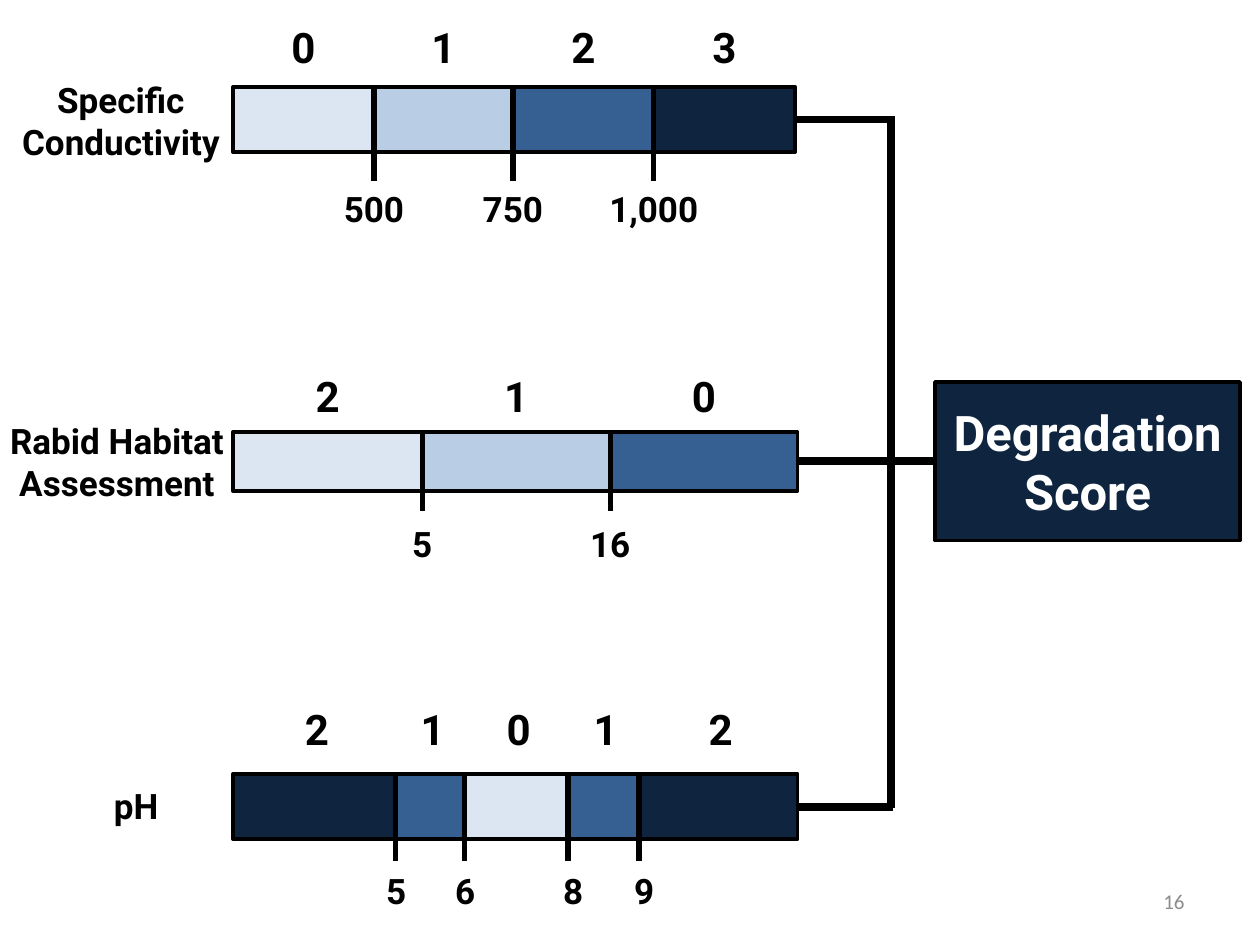
from itertools import pairwise
from lxml.etree import SubElement
from pptx import Presentation
from pptx.dml.color import RGBColor
from pptx.enum.shapes import MSO_CONNECTOR, MSO_SHAPE
from pptx.enum.text import MSO_ANCHOR, MSO_AUTO_SIZE, PP_ALIGN
from pptx.oxml.ns import qn
from pptx.util import Cm, Pt

BLACK = RGBColor(0x00, 0x00, 0x00)
WHITE = RGBColor(0xFF, 0xFF, 0xFF)
GREY = RGBColor(0x8C, 0x8C, 0x8C)
PALE = RGBColor(0xDC, 0xE6, 0xF2)
LIGHT = RGBColor(0xB9, 0xCD, 0xE5)
MID = RGBColor(0x37, 0x60, 0x92)
NAVY = RGBColor(0x0F, 0x24, 0x3E)

# Content, lengths in cm: "edges" bound the segments of a bar,
# "marks" pairs each inner edge's value with the width of its label
SCALES = [
    dict(name="Specific Conductivity", box=(0.18, 1.45, 4.52, 1.96),
         top=1.75, high=1.32, edges=[4.7, 7.54, 10.34, 13.18, 16.03],
         fills=[PALE, LIGHT, MID, NAVY],
         scores="0123", score=(0, 1.78, 1.9),
         marks=[("500", 1.78), ("750", 1.78), ("1,000", 2.74)],
         mark=(3.66, 1.65), tick=(1.78, 3.64)),
    dict(name="Rabid Habitat Assessment", box=(-0.61, 8.33, 5.94, 1.96),
         top=8.71, high=1.19, edges=[4.7, 8.51, 12.3, 16.08],
         fills=[PALE, LIGHT, MID],
         scores="210", score=(7.11, 2.39, 1.73),
         marks=[("5", 2.39), ("16", 2.39)],
         mark=(10.41, 1.5), tick=(8.7, 10.3)),
    dict(name="pH", box=(0.79, 15.67, 3.91, 1.12),
         top=15.6, high=1.32, edges=[4.7, 7.98, 9.37, 11.45, 12.88, 16.08],
         fills=[NAVY, MID, PALE, MID, NAVY],
         scores="21012", score=(13.74, 0.89, 1.9),
         marks=[("5", 0.89), ("6", 0.89), ("8", 0.69), ("9", 0.69)],
         mark=(17.4, 1.65), tick=(15.6, 17.36)),
]
# Thick lines that lead to the result: x1, y1, x2, y2
LINKS = [
    (16.03, 2.41, 18.01, 2.41),
    (16.08, 9.3, 18.9, 9.3),
    (16.08, 16.26, 18.01, 16.26),
    (17.96, 2.34, 17.96, 16.28),
]
RESULT = ("Degradation Score", (18.85, 7.7, 6.15, 3.2))
NUMBER = ("16", (18.21, 17.65, 5.92, 1.02))

deck = Presentation()
deck.slide_width, deck.slide_height = Cm(25.4), Cm(19.05)
slide = deck.slides.add_slide(deck.slide_layouts[6])
shapes = slide.shapes


def write(shape, text, size, color=BLACK, font="Roboto", bold=True,
          align=PP_ALIGN.CENTER, anchor=MSO_ANCHOR.MIDDLE):
    frame = shape.text_frame
    frame.word_wrap = True
    frame.vertical_anchor = anchor
    para = frame.paragraphs[0]
    para.alignment = align
    run = para.add_run()
    run.text = text
    run.font.name, run.font.size, run.font.bold = font, Pt(size), bold
    run.font.color.rgb = color


def label(text, box, size, **style):
    shape = shapes.add_textbox(*map(Cm, box))
    write(shape, text, size, **style)
    shape.text_frame.auto_size = MSO_AUTO_SIZE.SHAPE_TO_FIT_TEXT


def block(box, fill):
    shape = shapes.add_shape(MSO_SHAPE.RECTANGLE, *map(Cm, box))
    shape.shadow.inherit = False
    shape.fill.solid()
    shape.fill.fore_color.rgb = fill
    shape.line.color.rgb = BLACK
    shape.line.width = Pt(2)
    return shape


def stroke(ends, width):
    line = shapes.add_connector(MSO_CONNECTOR.STRAIGHT, *map(Cm, ends))
    line.line.color.rgb = BLACK
    line.line.width = Pt(width)
    SubElement(line._element.spPr, qn("a:effectLst"))


# Scales: segments with scores above, ticks with values below
for scale in SCALES:
    label(scale["name"], scale["box"], 20)
    edges = scale["edges"]
    top, wide, high = scale["score"]
    for (left, right), fill, score in zip(
            pairwise(edges), scale["fills"], scale["scores"]):
        block((left, scale["top"], right - left, scale["high"]), fill)
        label(score, ((left + right - wide) / 2, top, wide, high), 24)
    start, end = scale["tick"]
    top, high = scale["mark"]
    for x, (text, wide) in zip(edges[1:-1], scale["marks"]):
        stroke((x, start, x, end), 3)
        label(text, (x - wide / 2, top, wide, high), 20,
              anchor=MSO_ANCHOR.TOP)

# Links and result
for ends in LINKS:
    stroke(ends, 4.5)
text, box = RESULT
write(block(box, NAVY), text, 28, color=WHITE)

# Slide number
text, box = NUMBER
write(shapes.add_textbox(*map(Cm, box)), text, 12, color=GREY,
      font="Calibri", bold=False, align=PP_ALIGN.RIGHT)

deck.save("out.pptx")
